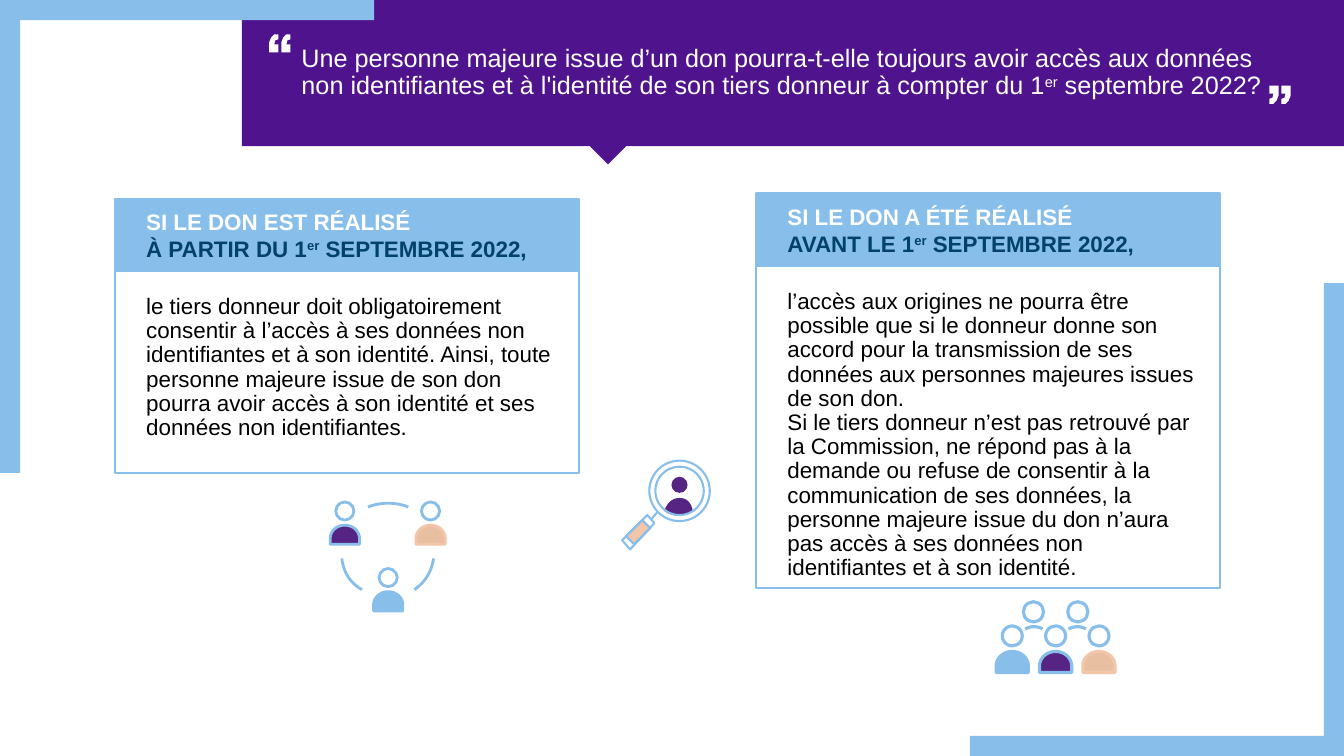
import math

import pptx
import pptx.dml.color
import pptx.enum.shapes
import pptx.enum.text
import pptx.oxml.ns
import pptx.util
from lxml import etree

Inches = pptx.util.Inches
Preset = pptx.enum.shapes.MSO_SHAPE
Anchor = pptx.enum.text.MSO_ANCHOR

WHITE, BLACK, NAVY = "FFFFFF", "000000", "01426A"
BLUE, VIOLET, PLUM = "88BFEA", "4F138E", "562583"
SAND, PEACH = "E8C0A1", "F3C6AA"

SLIDE_WIDTH, SLIDE_HEIGHT = 13.33, 7.5
HEADER_HEIGHT = 0.72

# Corner bracket and quotation mark, measured from their own corner
BRACKET = [(0, 0), (3.71, 0), (3.71, 0.2), (0.2, 0.2), (0.2, 4.69), (0, 4.69)]
QUOTE = [(0.09, 0), (0.09, 0.05), (0.06, 0.06), (0.05, 0.1), (0.09, 0.1),
         (0.09, 0.18), (0, 0.18), (0, 0.08), (0.02, 0.03), (0.05, 0)]


def color(value):
    return pptx.dml.color.RGBColor.from_string(value)


def paint(shape, fill=None, line=None, line_width=1.5):
    if fill:
        shape.fill.solid()
        shape.fill.fore_color.rgb = color(fill)
    else:
        shape.fill.background()
    if line:
        shape.line.color.rgb = color(line)
        shape.line.width = pptx.util.Pt(line_width)
    else:
        shape.line.fill.background()
    shape.shadow.inherit = False
    return shape


def add_preset(shapes, preset, left, top, width, height, **look):
    shape = shapes.add_shape(preset, Inches(left), Inches(top), Inches(width), Inches(height))
    return paint(shape, **look)


def add_circle(shapes, center_x, center_y, radius, **look):
    return add_preset(shapes, Preset.OVAL, center_x - radius, center_y - radius,
                      2 * radius, 2 * radius, **look)


def add_outline(shapes, points, closed=True, **look):
    corners = [(Inches(x), Inches(y)) for x, y in points]
    builder = shapes.build_freeform(*corners[0])
    builder.add_line_segments(corners[1:], close=closed)
    return paint(builder.convert_to_shape(), **look)


def placed(points, x, y, turn=1):
    """Move points to x, y; a turn of -1 rotates them by half a circle."""
    return [(x + turn * dx, y + turn * dy) for dx, dy in points]


def curve(start, control_1, control_2, end, steps=16):
    """Sample a cubic Bezier curve."""
    points = []
    for step in range(steps + 1):
        t = step / steps
        weights = ((1 - t) ** 3, 3 * t * (1 - t) ** 2, 3 * t * t * (1 - t), t ** 3)
        points.append(tuple(sum(weight * point[axis] for weight, point in
                                zip(weights, (start, control_1, control_2, end)))
                            for axis in (0, 1)))
    return points


def set_frame(shape, margins, anchor=Anchor.TOP, spacing=1.0):
    """Set margins (left, top, right, bottom) and return the first paragraph."""
    frame = shape.text_frame
    frame.word_wrap = True
    frame.auto_size = pptx.enum.text.MSO_AUTO_SIZE.NONE
    frame.vertical_anchor = anchor
    (frame.margin_left, frame.margin_top,
     frame.margin_right, frame.margin_bottom) = map(Inches, margins)
    paragraph = frame.paragraphs[0]
    paragraph.alignment = pptx.enum.text.PP_ALIGN.LEFT
    paragraph.line_spacing = spacing
    paragraph.space_before = pptx.util.Pt(0)
    return paragraph


def add_text(paragraph, text, size=16, fill=BLACK, bold=False):
    """Add runs; a newline breaks the line and ^...^ is superscript."""
    for line_number, line in enumerate(text.split("\n")):
        if line_number:
            paragraph.add_line_break()
        for index, part in enumerate(line.split("^")):
            if not part:
                continue
            run = paragraph.add_run()
            run.text = part
            run.font.name = "Arial"
            run.font.size = pptx.util.Pt(size)
            run.font.bold = bold
            run.font.color.rgb = color(fill)
            if index % 2:
                run._r.get_or_add_rPr().set("baseline", "30000")


def add_quote_marks(slide, x, y, turn):
    shapes = slide.shapes.add_group_shape().shapes
    for offset in (0, 0.12):
        add_outline(shapes, placed(QUOTE, x + turn * offset, y, turn), fill=WHITE)


def add_banner(slide, left, top, width, height):
    title = slide.shapes.title
    title.left, title.top = Inches(left), Inches(top)
    title.width, title.height = Inches(width), Inches(height)
    title.fill.solid()
    title.fill.fore_color.rgb = color(VIOLET)
    paragraph = set_frame(title, (0.59, 0, 0.28, 0), Anchor.MIDDLE, 0.9)
    add_text(paragraph, "Une personne majeure issue d’un don pourra-t-elle toujours avoir accès "
             "aux données\nnon identifiantes et à l'identité de son tiers donneur à compter "
             "du 1^er^ septembre 2022?", size=18, fill=WHITE)
    pointer = add_preset(slide.shapes, Preset.ISOSCELES_TRIANGLE, left + 3.45, top + height,
                         0.36, 0.18, fill=VIOLET)
    pointer.rotation = 180
    add_quote_marks(slide, left + 0.27, top + 0.34, 1)
    add_quote_marks(slide, left + width - 0.53, top + 1.03, -1)


def add_card(slide, left, top, width, body_height, condition, date, body):
    box = add_preset(slide.shapes, Preset.RECTANGLE, left, top + HEADER_HEIGHT,
                     width, body_height, line=BLUE)
    add_text(set_frame(box, (0.31, 0.24, 0.2, 0.05), spacing=0.9), body)
    header = add_preset(slide.shapes, Preset.RECTANGLE, left, top, width, HEADER_HEIGHT,
                        fill=BLUE, line=BLUE)
    paragraph = set_frame(header, (0.31, 0.05, 0.1, 0.05), Anchor.MIDDLE)
    add_text(paragraph, condition, fill=WHITE, bold=True)
    paragraph.add_line_break()
    add_text(paragraph, date, fill=NAVY, bold=True)


def add_person(shapes, center_x, top, scale, fill, line, line_width):
    radius = 0.09 * scale
    add_circle(shapes, center_x, top + radius, radius, line=BLUE, line_width=line_width)
    half, shoulder, base = 0.145 * scale, top + 0.36 * scale, top + 0.42 * scale
    angles = [math.pi * step / 20 for step in range(21)]
    arch = [(center_x + half * math.cos(angle), shoulder - 0.13 * scale * math.sin(angle))
            for angle in angles]
    add_outline(shapes, arch + [(center_x - half, base), (center_x + half, base)],
                fill=fill, line=line, line_width=line_width)


def add_people_ring(slide, left, top):
    shapes = slide.shapes.add_group_shape().shapes
    for dx, dy, fill, line in ((0.15, 0, PLUM, BLUE), (1, 0, SAND, PEACH), (0.58, 0.66, BLUE, BLUE)):
        add_person(shapes, left + dx, top + dy, 1, fill, line, 2)
    for arc in (((0.38, 0.05), (0.5, 0), (0.66, 0), (0.78, 0.05)),
                ((0.12, 0.56), (0.14, 0.7), (0.2, 0.8), (0.32, 0.87)),
                ((1.03, 0.56), (1.01, 0.7), (0.94, 0.8), (0.84, 0.87))):
        add_outline(shapes, curve(*placed(arc, left, top)), closed=False, line=BLUE, line_width=2)


def add_crowd(slide, left, top):
    shapes = slide.shapes.add_group_shape().shapes
    for index, (fill, line) in enumerate(((BLUE, BLUE), (PLUM, BLUE), (SAND, PEACH))):
        add_person(shapes, left + 0.16 + 0.43 * index, top + 0.24, 1.1, fill, line, 2.25)
    for center_x, arc_left in ((left + 0.37, left + 0.29), (left + 0.81, left + 0.72)):
        add_circle(shapes, center_x, top + 0.1, 0.1, line=BLUE, line_width=2.25)
        arc = placed(((0, 0.27), (0.05, 0.24), (0.12, 0.24), (0.17, 0.27)), arc_left, top)
        add_outline(shapes, curve(*arc), closed=False, line=BLUE, line_width=2.25)


def add_magnifier(slide, left, top):
    shapes = slide.shapes.add_group_shape().shapes
    grip = [(0.2, 0.59), (0.04, 0.75), (0.12, 0.83), (0.28, 0.67)]
    handle = [(0.08, 0.88), (0, 0.79), (0.25, 0.54), (0.32, 0.62)]
    add_outline(shapes, placed(grip, left, top), fill=PEACH, line=BLUE)
    add_outline(shapes, placed(handle, left, top), line=BLUE)
    bust = (curve((0.42, 0.5), (0.42, 0.5), (0.45, 0.37), (0.57, 0.37))
            + curve((0.57, 0.37), (0.69, 0.37), (0.7, 0.5), (0.7, 0.5))
            + curve((0.7, 0.5), (0.7, 0.5), (0.56, 0.6), (0.42, 0.5)))
    add_outline(shapes, placed(bust, left, top), fill=PLUM)
    add_circle(shapes, left + 0.57, top + 0.24, 0.08, fill=PLUM)
    for radius in (0.24, 0.3):
        add_circle(shapes, left + 0.57, top + 0.3, radius, line=BLUE)
    neck = shapes.add_connector(pptx.enum.shapes.MSO_CONNECTOR.STRAIGHT, Inches(left + 0.35),
                                Inches(top + 0.51), Inches(left + 0.29), Inches(top + 0.58))
    neck.line.color.rgb = color(BLUE)
    neck.line.width = pptx.util.Pt(1.5)
    etree.SubElement(neck._element.spPr, pptx.oxml.ns.qn("a:effectLst"))


def main():
    presentation = pptx.Presentation()
    presentation.slide_width = Inches(SLIDE_WIDTH)
    presentation.slide_height = Inches(SLIDE_HEIGHT)
    slide = presentation.slides.add_slide(presentation.slide_layouts[5])
    add_banner(slide, 2.4, 0, 10.93, 1.45)
    for x, y, turn in ((0, 0, 1), (SLIDE_WIDTH, SLIDE_HEIGHT, -1)):
        add_outline(slide.shapes, placed(BRACKET, x, y, turn), fill=BLUE)
    add_card(slide, 1.14, 1.97, 4.6, 2, "SI LE DON EST RÉALISÉ", "À PARTIR DU 1^er^ SEPTEMBRE 2022,",
             "le tiers donneur doit obligatoirement consentir à l’accès à ses données non "
             "identifiantes et à son identité. Ainsi, toute personne majeure issue de son don "
             "pourra avoir accès à son identité et ses données non identifiantes.")
    add_card(slide, 7.5, 1.92, 4.6, 3.19, "SI LE DON A ÉTÉ RÉALISÉ", "AVANT LE 1^er^ SEPTEMBRE 2022,",
             "l’accès aux origines ne pourra être possible que si le donneur donne son accord "
             "pour la transmission de ses données aux personnes majeures issues de son don.\n"
             "Si le tiers donneur n’est pas retrouvé par la Commission, ne répond pas à la "
             "demande ou refuse de consentir à la communication de ses données, la personne "
             "majeure issue du don n’aura pas accès à ses données non identifiantes et à son "
             "identité.")
    add_people_ring(slide, 3.27, 4.98)
    add_magnifier(slide, 6.17, 4.57)
    add_crowd(slide, 9.88, 5.97)
    presentation.save("out.pptx")


if __name__ == "__main__":
    main()
